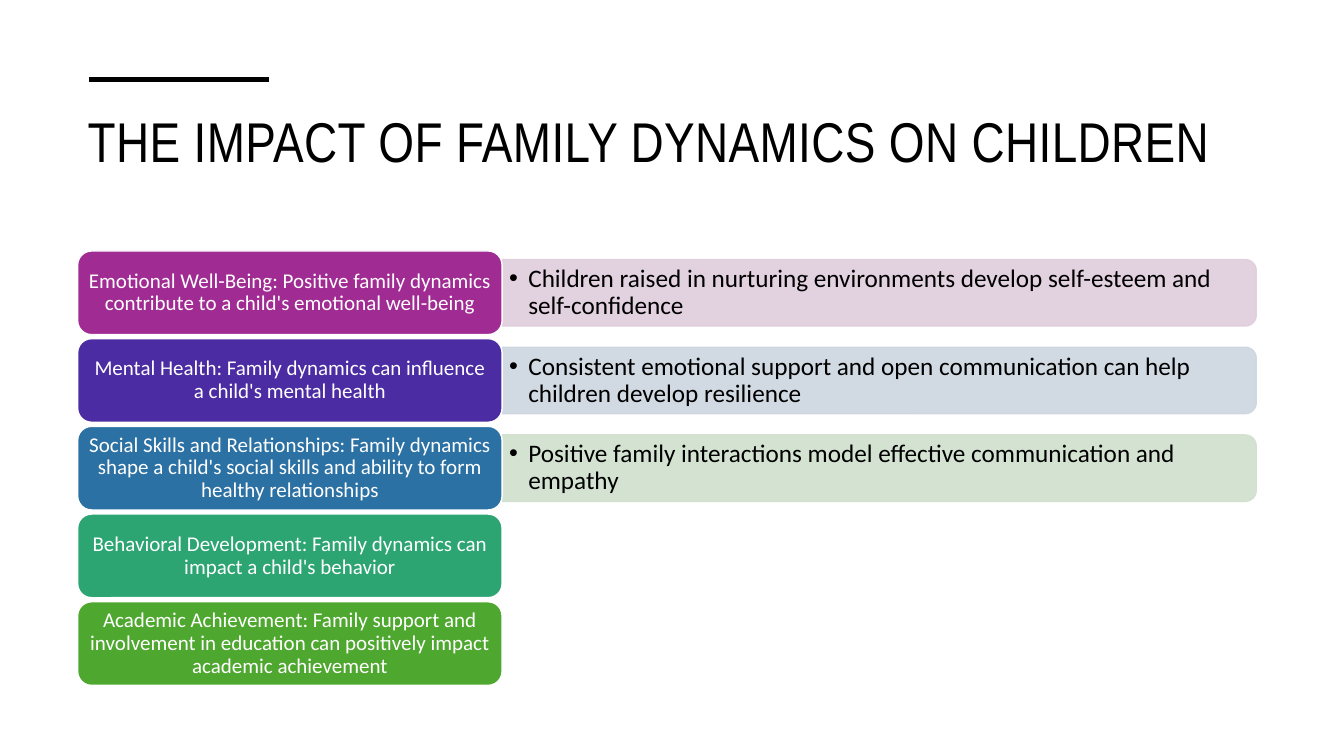
from lxml import etree
from pptx import Presentation
from pptx.dml.color import RGBColor
from pptx.enum import shapes, text
from pptx.oxml import ns
from pptx.util import Inches, Pt

TITLE = "THE IMPACT OF FAMILY DYNAMICS ON CHILDREN"
# Topic, its colour, supporting detail, detail colour
ROWS = [
    ("Emotional Well-Being: Positive family dynamics contribute to a child's emotional well-being", "purple",
     "Children raised in nurturing environments develop self-esteem and self-confidence", "pale_purple"),
    ("Mental Health: Family dynamics can influence a child's mental health", "indigo",
     "Consistent emotional support and open communication can help children develop resilience", "pale_blue"),
    ("Social Skills and Relationships: Family dynamics shape a child's social skills "
     "and ability to form healthy relationships", "blue",
     "Positive family interactions model effective communication and empathy", "pale_green"),
    ("Behavioral Development: Family dynamics can impact a child's behavior", "teal", None, None),
    ("Academic Achievement: Family support and involvement in education can positively impact "
     "academic achievement", "green", None, None),
]
COLORS = {
    "black": "000000", "white": "FFFFFF",
    "purple": "A02B93", "indigo": "4B2CA2", "blue": "2C71A4", "teal": "2DA573", "green": "4EA72E",
    "pale_purple": "DFCDDC", "pale_blue": "CDD6E0", "pale_green": "D0E1CD",
}
LEFT, TOP, STEP = 0.77, 2.49, 0.87
TOPIC_W, TOPIC_H = 4.21, 0.83
BAR_W, BAR_H = 7.48, 0.66
DETAIL_W, DETAIL_H = 7.45, 0.6


def rgb(name):
    return RGBColor.from_string(COLORS[name])


def box(left, top, width, height):
    return [Inches(round(n, 3)) for n in (left, top, width, height)]


def add_block(kind, place, fill, line):
    block = slide.shapes.add_shape(kind, *place)
    block.shadow.inherit = False
    block.fill.solid()
    block.fill.fore_color.rgb = rgb(fill)
    block.line.color.rgb = rgb(line)
    block.line.width = Pt(1)
    return block


def write(frame, words, font, size, color, align, spacing, insets):
    frame.word_wrap = True
    frame.margin_left = frame.margin_right = Inches(insets[0])
    frame.margin_top = frame.margin_bottom = Inches(insets[1])
    paragraph = frame.paragraphs[0]
    paragraph.alignment = align
    paragraph.line_spacing = spacing
    run = paragraph.add_run()
    run.text = words
    run.font.name = font
    run.font.size = Pt(size)
    run.font.color.rgb = rgb(color)
    return paragraph


prs = Presentation()
prs.slide_width, prs.slide_height = Inches(13.33), Inches(7.5)
slide = prs.slides.add_slide(prs.slide_layouts[5])

# Accent line above the title
accent = slide.shapes.add_connector(shapes.MSO_CONNECTOR.STRAIGHT, *box(0.88, 0.79, 2.67, 0.79))
accent.line.color.rgb = rgb("black")
accent.line.width = Pt(3.5)
etree.SubElement(accent._element.spPr, ns.qn("a:effectLst"))

# Title
title = slide.shapes.title
title.left, title.top, title.width, title.height = box(LEFT, 1.01, 11.69, 1.5)
title.text_frame.vertical_anchor = text.MSO_ANCHOR.TOP
title.text_frame.auto_size = text.MSO_AUTO_SIZE.NONE
heading = write(title.text_frame, TITLE, "Arial Narrow", 40, "black", text.PP_ALIGN.LEFT, 1.0, (0.1, 0.05))
heading.runs[0].font._element.set("spc", "30")

# Rows: detail bar behind, topic box at the left
for i, (topic, topic_color, detail, detail_color) in enumerate(ROWS):
    top = TOP + i * STEP
    middle = top + TOPIC_H / 2
    detail_left = LEFT + TOPIC_W

    if detail:
        # The bar stands upright and is turned so its round end faces right
        bar = add_block(shapes.MSO_SHAPE.ROUND_2_SAME_RECTANGLE,
                        box(detail_left + (BAR_W - BAR_H) / 2, middle - BAR_W / 2, BAR_H, BAR_W),
                        detail_color, detail_color)
        bar.rotation = 90
        for color in bar._element.spPr.iter(ns.qn("a:srgbClr")):
            etree.SubElement(color, ns.qn("a:alpha"), val="90000")

        note = slide.shapes.add_textbox(*box(detail_left, middle - DETAIL_H / 2, DETAIL_W, DETAIL_H))
        note.text_frame.vertical_anchor = text.MSO_ANCHOR.MIDDLE
        bullet = write(note.text_frame, detail, "Calibri", 18, "black", text.PP_ALIGN.LEFT, 0.9, (0.07, 0.04))
        props = bullet._p.get_or_add_pPr()
        props.set("marL", str(Inches(0.19)))
        props.set("indent", str(Inches(-0.19)))
        etree.SubElement(props, ns.qn("a:buFont"), typeface="Arial")
        etree.SubElement(props, ns.qn("a:buChar"), char="•")

    label = add_block(shapes.MSO_SHAPE.ROUNDED_RECTANGLE, box(LEFT, top, TOPIC_W, TOPIC_H), topic_color, "white")
    label.text_frame.vertical_anchor = text.MSO_ANCHOR.MIDDLE
    write(label.text_frame, topic, "Calibri", 15, "white", text.PP_ALIGN.CENTER, 0.9, (0.06, 0.03))

prs.save("out.pptx")
